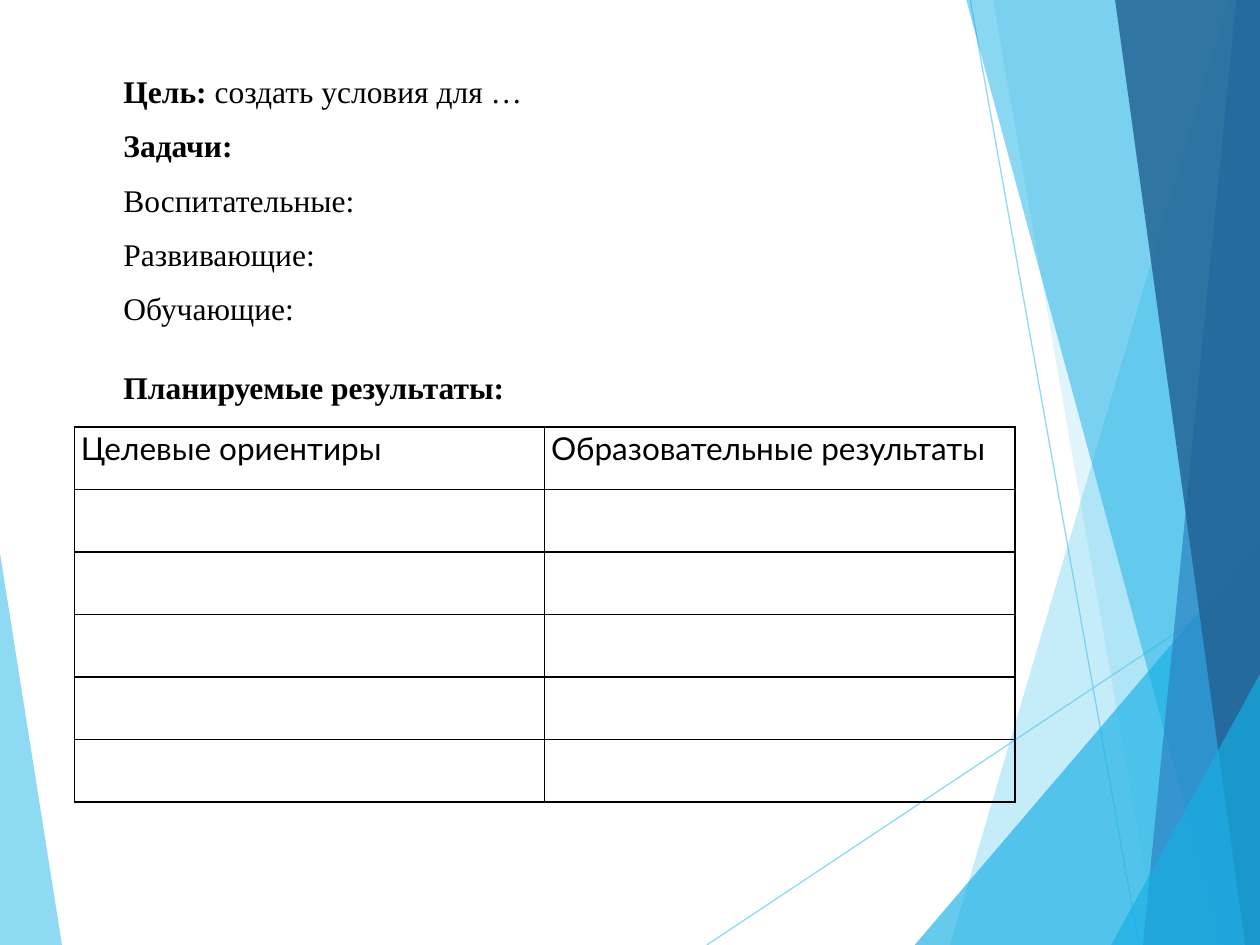
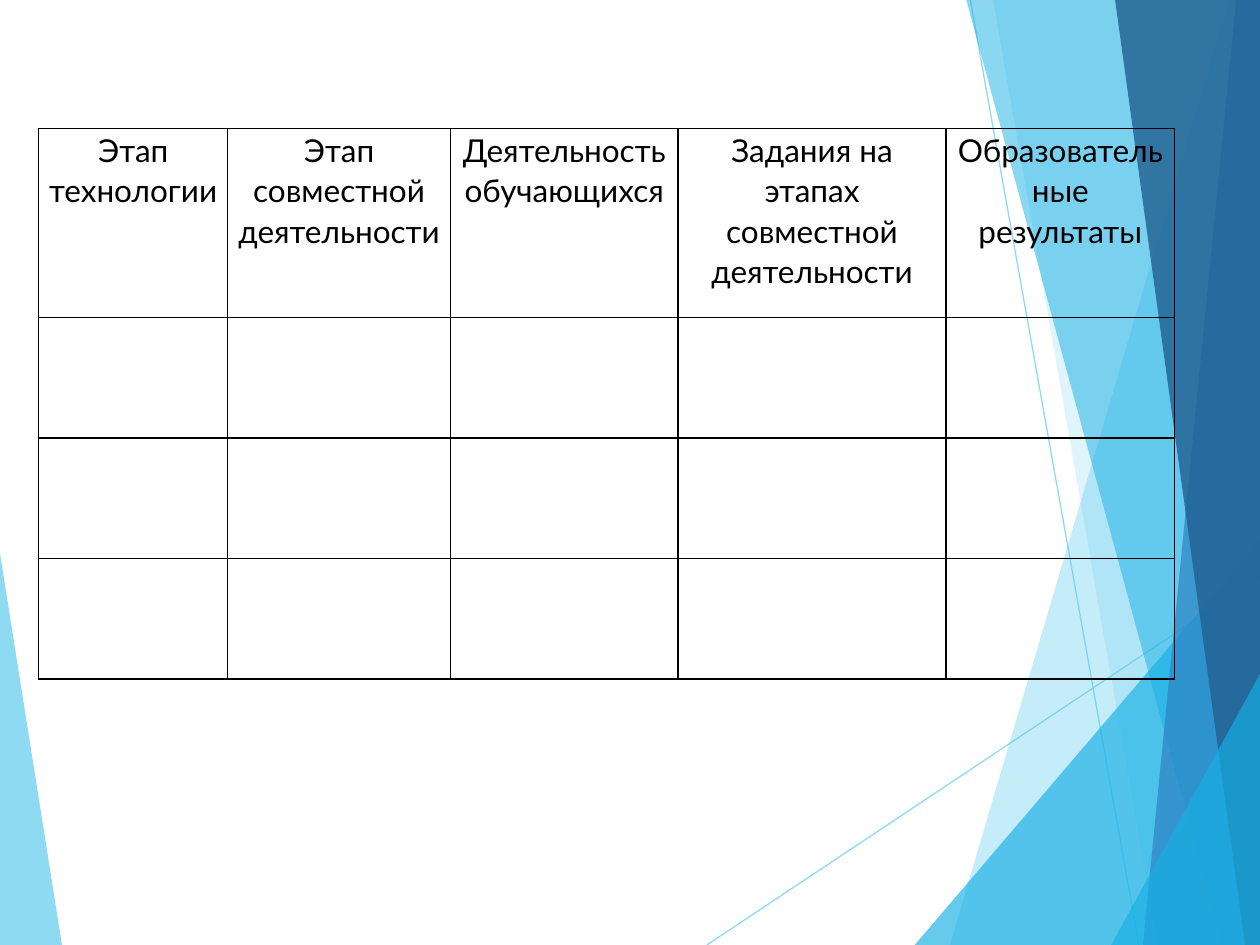
from lxml import etree
from pptx import Presentation, util as u
from pptx.dml.color import RGBColor
from pptx.enum import shapes, text
from pptx.oxml.ns import qn

WIDTH, HEIGHT = 25.4, 19.05
COLORS = {
    "sky": "5FCBEF",
    "cyan": "17B0E4",
    "blue": "2E83C3",
    "navy": "226292",
    "ink": "000000",
}
SERIF, SANS = "Times New Roman", "Lato"

RAYS = [((14.25, HEIGHT), (WIDTH, 11.63)), ((19.56, 0), (22.96, HEIGHT))]
SHARDS = [
    ((0, 11.15), 1.25, 0, "sky", 70),
    ((24.77, 0), 19.15, WIDTH, "sky", 36),
    ((20.02, 0), 23.34, WIDTH, "sky", 20),
    ((WIDTH, 10.9), 18.44, WIDTH, "cyan", 66),
    ((19.48, 0), 24.64, WIDTH, "cyan", 50),
    ((24.92, 0), 23.04, WIDTH, "blue", 70),
    ((22.48, 0), 25.1, WIDTH, "navy", 82),
    ((WIDTH, 13.59), 22.4, WIDTH, "cyan", 66),
]


def cm(*lengths):
    return [u.Cm(length) for length in lengths]


def color(name):
    return RGBColor.from_string(COLORS[name])


def set_opacity(shape, percent):
    for node in shape.element.iter(qn("a:srgbClr")):
        etree.SubElement(node, qn("a:alpha"), val=str(percent * 1000))


def add_ray(page, start, end):
    ray = page.shapes.add_connector(
        shapes.MSO_CONNECTOR.STRAIGHT, *cm(*start, *end))
    ray.line.color.rgb = color("sky")
    ray.line.width = u.Pt(0.75)
    set_opacity(ray, 70)
    etree.SubElement(ray.element.spPr, qn("a:effectLst"))
    return ray


def add_shard(page, start, foot, edge, fill, opacity):
    outline = page.shapes.build_freeform(*cm(*start))
    corners = [(foot, HEIGHT), (edge, HEIGHT), (edge, start[1])]
    outline.add_line_segments([cm(*corner) for corner in corners])
    shard = outline.convert_to_shape()
    shard.shadow.inherit = False
    shard.fill.solid()
    shard.fill.fore_color.rgb = color(fill)
    shard.line.fill.background()
    set_opacity(shard, opacity)
    return shard


def add_backdrop(layout, page):
    for holder in list(layout.placeholders):
        layout.shapes.element.remove(holder.element)
    parts = [add_ray(page, *ray) for ray in RAYS]
    parts += [add_shard(page, *shard) for shard in SHARDS]
    for part in parts:
        layout.shapes.element.append(part.element)


def write(para, words, font=SERIF, bold=False, align=None, after=0):
    para.line_spacing = 1.07
    para.space_after = u.Pt(after)
    para.alignment = align
    span = para.add_run()
    span.text = words
    span.font.name = font
    span.font.size = u.Pt(18)
    span.font.bold = bold
    span.font.color.rgb = color("ink")


def add_text_box(page, place, lines, wrap=True):
    box = page.shapes.add_textbox(*cm(*place))
    frame = box.text_frame
    frame.word_wrap = wrap
    frame.auto_size = text.MSO_AUTO_SIZE.SHAPE_TO_FIT_TEXT
    for index, spans in enumerate(lines):
        para = frame.add_paragraph() if index else frame.paragraphs[0]
        for words, bold in spans:
            write(para, words, bold=bold, after=8)


def draw_borders(holder):
    for properties in holder.element.iter(qn("a:tcPr")):
        for index, side in enumerate(("lnL", "lnR", "lnT", "lnB")):
            line = etree.Element(qn(f"a:{side}"), w=str(u.Pt(1)))
            fill = etree.SubElement(line, qn("a:solidFill"))
            etree.SubElement(fill, qn("a:srgbClr"), val=COLORS["ink"])
            properties.insert(index, line)


def add_grid(page, left, top, widths, heights, headings, align=None):
    holder = page.shapes.add_table(
        len(heights), len(widths),
        *cm(left, top, sum(widths), sum(heights)))
    table = holder.table
    table.first_row = table.horz_banding = False
    for column, width in zip(table.columns, widths):
        column.width = u.Cm(width)
    for row, height in zip(table.rows, heights):
        row.height = u.Cm(height)
    for cell in table.iter_cells():
        cell.fill.background()
        cell.margin_left = cell.margin_right = u.Cm(0.13)
        cell.margin_top = cell.margin_bottom = 0
    for cell, heading in zip(table.rows[0].cells, headings):
        write(cell.text_frame.paragraphs[0], heading, font=SANS, align=align)
    draw_borders(holder)


def build_goals(page):
    add_text_box(page, (2.24, 1.27, 12.7, 6.5), [
        [("Цель: ", True), ("создать условия для …", False)],
        [("Задачи:", True)],
        [("Воспитательные:", False)],
        [("Развивающие:", False)],
        [("Обучающие:", False)],
    ])
    add_text_box(page, (2.24, 7.24, 8.28, 1.04),
                 [[("Планируемые результаты:", True)]], wrap=False)
    add_grid(page, 1.5, 8.61, [9.48] * 2, [1.26] * 6,
             ["Целевые ориентиры", "Образовательные результаты"])


def build_stages(page):
    add_grid(page, 0.78, 2.59, [3.81, 4.49, 4.59, 5.4, 4.61],
             [3.81] + [2.43] * 3,
             ["Этап технологии", "Этап совместной деятельности",
              "Деятельность обучающихся",
              "Задания на этапах совместной деятельности",
              "Образовательные результаты"],
             align=text.PP_ALIGN.CENTER)


def main():
    deck = Presentation()
    deck.slide_width, deck.slide_height = cm(WIDTH, HEIGHT)
    layout = deck.slide_layouts.get_by_name("Blank")
    goals, stages = [deck.slides.add_slide(layout) for _ in range(2)]
    add_backdrop(layout, goals)
    build_goals(goals)
    build_stages(stages)
    deck.save("out.pptx")


if __name__ == "__main__":
    main()
